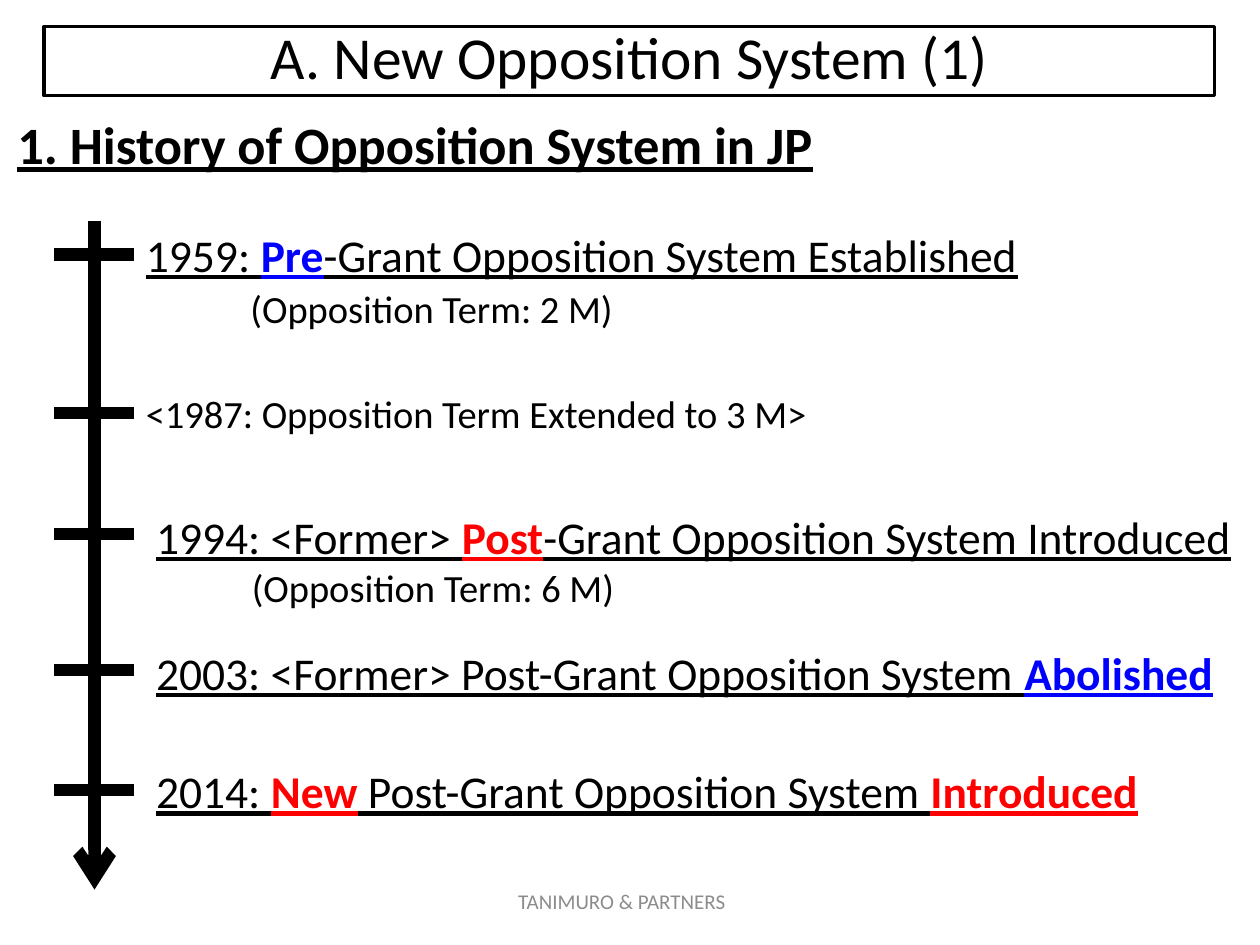
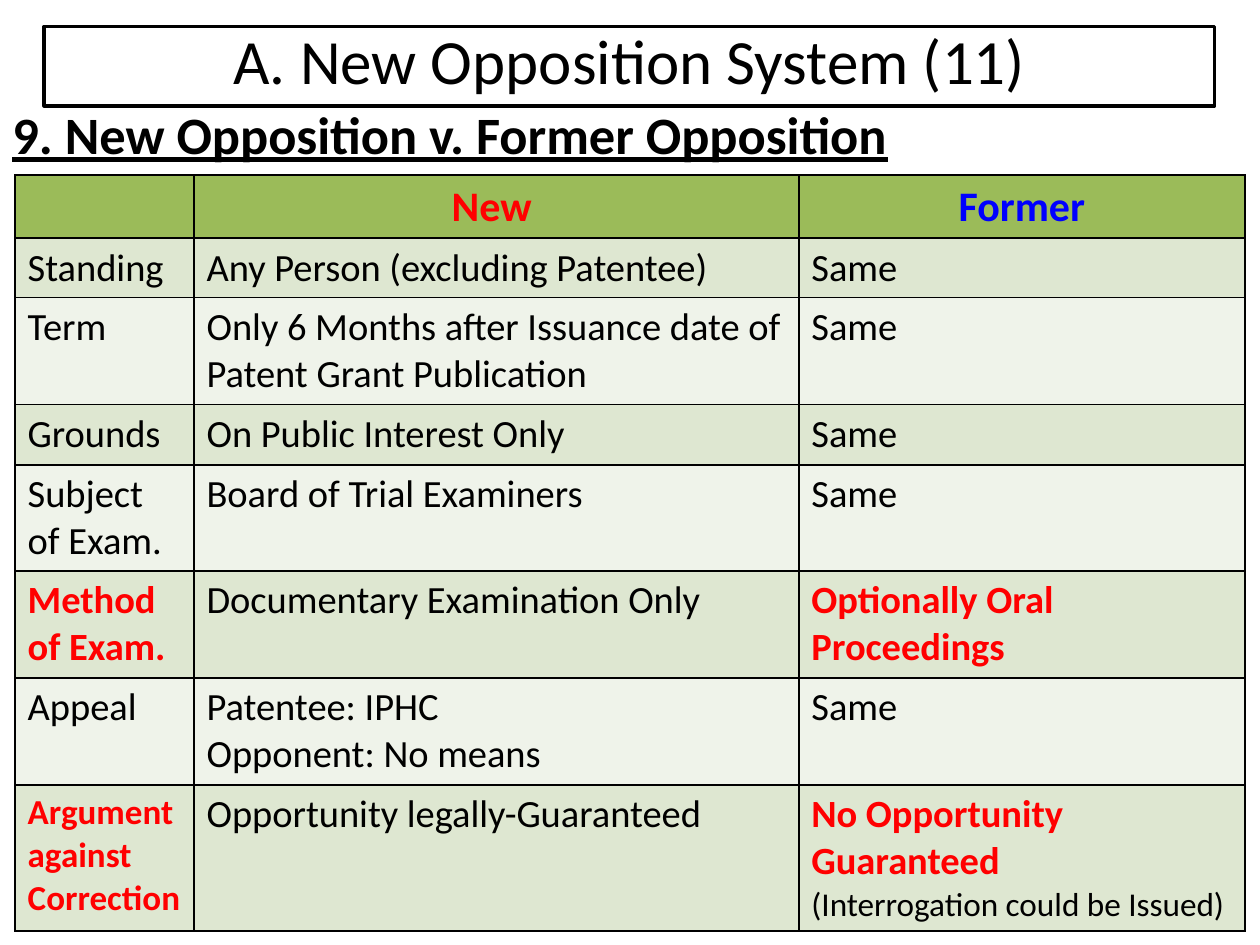
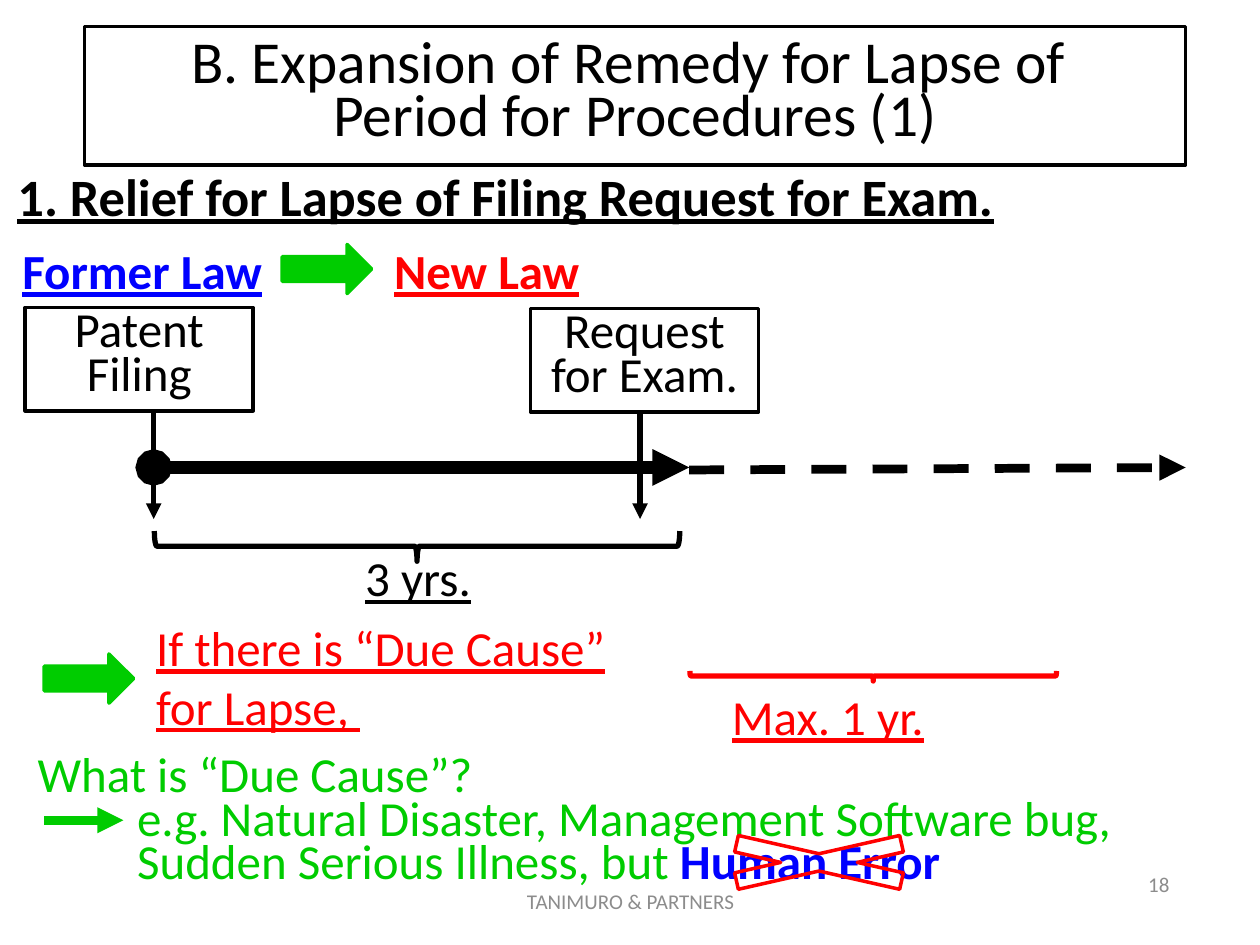
from dataclasses import dataclass
from typing import Any, NamedTuple, Optional

from pptx import Presentation
from pptx.dml.color import RGBColor
from pptx.enum.dml import MSO_LINE_DASH_STYLE as Dash
from pptx.enum.shapes import MSO_CONNECTOR as Connector, MSO_SHAPE as Preset
from pptx.enum.text import MSO_ANCHOR as Anchor, MSO_AUTO_SIZE as AutoSize, PP_ALIGN as Align
from pptx.oxml.ns import qn
from pptx.util import Inches, Pt
from lxml.etree import SubElement

FONT = "Calibri"
BLACK, WHITE, GREY = "000000", "FFFFFF", "8C8C8C"
RED, BLUE, GREEN = "FF0000", "0000FF", "00CC00"
HEADER_GREEN, BAND_DARK, BAND_LIGHT = "9BBB59", "DEE7D1", "EFF3EA"
FIRM = "TANIMURO & PARTNERS"


class Box(NamedTuple):
    left: float
    top: float
    width: float
    height: float

    def lengths(self) -> list[int]:
        return [Inches(value) for value in self]


@dataclass(frozen=True)
class Span:
    text: str
    color: str = BLACK
    bold: bool = False
    underline: bool = False


@dataclass(frozen=True)
class Para:
    spans: tuple[Span, ...]
    size: float = 22
    align: Any = Align.LEFT
    leading: Optional[float] = None
    before: float = 0
    indent: float = 0


@dataclass(frozen=True)
class Line:
    start: tuple[float, float]
    end: tuple[float, float]
    width: float
    color: str = BLACK
    head: Optional[str] = None
    tail: Optional[str] = None
    dash: Any = None


@dataclass(frozen=True)
class Figure:
    preset: Any
    box: Box
    line: str
    line_width: float = 2
    fill: Optional[str] = None
    rotation: float = 0


@dataclass(frozen=True)
class Event:
    """A stop on the timeline: the height of its tick, and its text."""
    tick: float
    box: Box
    paras: tuple[Para, ...]


def set_all(target: Any, values: dict[str, Any]) -> None:
    for name, value in values.items():
        setattr(target, name, value)


def paint(format_with_color: Any, color: str) -> None:
    """Give a fill, line fill or font one solid colour."""
    if hasattr(format_with_color, "solid"):
        format_with_color.solid()
        format_with_color.fore_color.rgb = RGBColor.from_string(color)
    else:
        format_with_color.color.rgb = RGBColor.from_string(color)


def single(text: str, size: float = 22, color: str = BLACK, bold: bool = False,
           underline: bool = False, **layout: Any) -> Para:
    """A paragraph of one span."""
    return Para((Span(text, color, bold, underline),), size, **layout)


def underlined(*pieces: tuple[str, str]) -> Para:
    """A timeline headline; coloured pieces are bold."""
    return Para(tuple(Span(text, color, color != BLACK, True) for text, color in pieces), 26)


def write(frame: Any, paras: tuple[Para, ...]) -> None:
    for number, item in enumerate(paras):
        para = frame.add_paragraph() if number else frame.paragraphs[0]
        set_all(para, {"alignment": item.align, "space_before": Pt(item.before)})
        if item.leading:
            para.line_spacing = Pt(item.leading)
        if item.indent:
            properties = para._p.get_or_add_pPr()
            properties.set("marL", str(Inches(item.indent)))
            properties.set("indent", "0")
        for piece in item.spans:
            for row, text in enumerate(piece.text.split("\n")):
                if row:
                    para.add_line_break()
                span = para.add_run()
                span.text = text
                set_all(span.font, {"name": FONT, "size": Pt(item.size), "bold": piece.bold,
                                    "underline": piece.underline})
                paint(span.font, piece.color)


def add_text(page: Any, box: Box, *paras: Para, anchor: Any = Anchor.TOP) -> None:
    frame = page.shapes.add_textbox(*box.lengths()).text_frame
    set_all(frame, {"word_wrap": True, "vertical_anchor": anchor})
    write(frame, paras)


def add_small_print(page: Any, box: Box, text: str, align: Any) -> None:
    add_text(page, box, single(text, 12, GREY, align=align), anchor=Anchor.MIDDLE)


def add_heading(page: Any, box: Box, text: str) -> None:
    add_text(page, box, single(text, 30, bold=True, underline=True))


def outline(shape: Any, color: str, width: float) -> None:
    paint(shape.line.fill, color)
    shape.line.width = Pt(width)


def add_figure(page: Any, figure: Figure) -> Any:
    shape = page.shapes.add_shape(figure.preset, *figure.box.lengths())
    shape.shadow.inherit = False
    shape.rotation = figure.rotation
    outline(shape, figure.line, figure.line_width)
    if figure.fill:
        paint(shape.fill, figure.fill)
    else:
        shape.fill.background()
    return shape


def add_line(page: Any, line: Line) -> None:
    ends = [Inches(value) for value in (*line.start, *line.end)]
    shape = page.shapes.add_connector(Connector.STRAIGHT, *ends)
    outline(shape, line.color, line.width)
    if line.dash:
        shape.line.dash_style = line.dash
    for tag, kind in (("a:headEnd", line.head), ("a:tailEnd", line.tail)):
        if kind:
            SubElement(shape.line._get_or_add_ln(), qn(tag), type=kind)
    SubElement(shape._element.spPr, qn("a:effectLst"))


def add_page(deck: Any, title: str, box: Box, size: float, leading: float) -> Any:
    """A title-only slide with its title in a white framed box."""
    page = deck.slides.add_slide(deck.slide_layouts[5])
    shape = page.shapes.title
    left, top, width, height = box.lengths()
    set_all(shape, {"left": left, "top": top, "width": width, "height": height})
    paint(shape.fill, WHITE)
    outline(shape, BLACK, 2)
    set_all(shape.text_frame, {"auto_size": AutoSize.NONE, "word_wrap": True,
                               "vertical_anchor": Anchor.MIDDLE})
    write(shape.text_frame, (single(title, size, align=Align.CENTER, leading=leading),))
    return page


def border_cell(cell: Any) -> None:
    properties = cell._tc.get_or_add_tcPr()
    for tag in ("a:lnL", "a:lnR", "a:lnT", "a:lnB"):
        edge = SubElement(properties, qn(tag), w=str(Pt(1)))
        fill = SubElement(edge, qn("a:solidFill"))
        SubElement(fill, qn("a:srgbClr"), val=BLACK)


def add_comparison(page: Any, box: Box, columns: list[float], heights: list[float],
                   rows: list[tuple[Any, ...]]) -> None:
    table = page.shapes.add_table(len(rows), len(columns), *box.lengths()).table
    for column, width in zip(table.columns, columns):
        column.width = Inches(width)
    for number, (height, values) in enumerate(zip(heights, rows)):
        table.rows[number].height = Inches(height)
        band = BAND_DARK if number % 2 else BAND_LIGHT
        for cell, value in zip(table.rows[number].cells, values):
            border_cell(cell)
            paint(cell.fill, band if number else HEADER_GREEN)
            if value:
                write(cell.text_frame, (single(value),) if isinstance(value, str) else value)


def build_history(deck: Any) -> None:
    page = add_page(deck, "A. New Opposition System (1)", Box(0.35, 0.21, 9.29, 0.55), 34, 35)
    add_heading(page, Box(0.04, 0.84, 8.9, 0.61), "1. History of Opposition System in JP")
    add_small_print(page, Box(3.35, 6.95, 3.17, 0.4), FIRM, Align.CENTER)
    add_line(page, Line((0.75, 1.75), (0.75, 7.06), 7, tail="arrow"))
    events = [
        Event(2.02, Box(1.06, 1.75, 8.66, 0.98), (
            underlined(("1959: ", BLACK), ("Pre", BLUE),
                       ("-Grant Opposition System Established", BLACK)),
            single("(Opposition Term: 2 M)", indent=0.83, before=2))),
        Event(3.28, Box(1.06, 3.05, 8.66, 0.47), (
            single("<1987: Opposition Term Extended to 3 M>"),)),
        Event(4.24, Box(1.14, 3.99, 9.29, 0.91), (
            underlined(("1994: <Former> ", BLACK), ("Post", RED),
                       ("-Grant Opposition System Introduced", BLACK)),
            single("(Opposition Term: 6 M)", indent=0.76))),
        Event(5.32, Box(1.14, 5.07, 8.66, 0.54), (
            underlined(("2003: <Former> Post-Grant Opposition System ", BLACK),
                       ("Abolished", BLUE)),)),
        Event(6.27, Box(1.14, 6.01, 8.66, 0.54), (
            underlined(("2014: ", BLACK), ("New", RED),
                       (" Post-Grant Opposition System ", BLACK), ("Introduced", RED)),)),
    ]
    for event in events:
        add_line(page, Line((0.43, event.tick), (1.06, event.tick), 7))
        add_text(page, event.box, *event.paras)


def build_comparison(deck: Any) -> None:
    page = add_page(deck, "A. New Opposition System (11)", Box(0.35, 0.21, 9.29, 0.63), 36, 35)
    add_heading(page, Box(0, 0.76, 9.88, 0.71), "9. New Opposition v. Former Opposition")

    def header(text: str, color: str) -> tuple[Para, ...]:
        return (single(text, 24, color, True, align=Align.CENTER),)

    def changed(text: str, size: float = 22) -> tuple[Para, ...]:
        return (single(text, size, RED, True),)

    rows = [
        ("", header("New ", RED), header("Former", BLUE)),
        ("Standing", "Any Person (excluding Patentee)", "Same"),
        ("Term", "Only 6 Months after Issuance date of Patent Grant Publication", "Same"),
        ("Grounds", "On Public Interest Only", "Same"),
        ("Subject of Exam.", "Board of Trial Examiners", "Same"),
        (changed("Method of Exam."), "Documentary Examination Only",
         changed("Optionally Oral Proceedings")),
        ("Appeal", (single("Patentee: IPHC"), single("Opponent: No means")), "Same"),
        (changed("Argument against Correction", 20), "Opportunity legally-Guaranteed",
         changed("No Opportunity Guaranteed")
         + (single("(Interrogation could be Issued)", 19),)),
    ]
    add_comparison(page, Box(0.12, 1.39, 9.76, 6), [1.42, 4.8, 3.54],
                   [0.5, 0.47, 0.85, 0.48, 0.84, 0.85, 0.85, 1.16], rows)


def build_remedy(deck: Any) -> None:
    page = add_page(deck, "B. Expansion of Remedy for Lapse of \nPeriod for Procedures (1)",
                    Box(0.67, 0.21, 8.74, 1.1), 34, 30)
    add_heading(page, Box(0.04, 1.25, 9.69, 0.61),
                "1. Relief for Lapse of Filing Request for Exam.")
    add_small_print(page, Box(3.42, 6.95, 3.17, 0.4), FIRM, Align.CENTER)
    add_small_print(page, Box(7.05, 6.82, 2.33, 0.4), "18", Align.RIGHT)

    labels = [
        (Box(0.08, 1.86, 2.17, 0.57), "Former Law", BLUE, True),
        (Box(3.03, 1.86, 1.73, 0.57), "New Law", RED, True),
        (Box(2.8, 4.3, 2.05, 0.57), "3 yrs.", BLACK, False),
        (Box(5.71, 5.4, 2.05, 0.57), "Max. 1 yr.", RED, False),
        (Box(1.14, 4.85, 3.86, 1.04), "If there is “Due Cause” for Lapse, ", RED, False),
    ]
    for box, text, color, bold in labels:
        add_text(page, box, single(text, 28, color, bold, True))

    lines = [
        Line((1.22, 3.71), (5.47, 3.71), 7, head="oval", tail="triangle"),
        Line((5.47, 3.73), (9.41, 3.71), 5, tail="triangle", dash=Dash.DASH),
        Line((0.35, 6.51), (0.98, 6.51), 5, GREEN, tail="triangle"),
    ]
    lines += [Line((x, 3.26), (x, 4.12), 3, tail="triangle") for x in (1.22, 5.08)]
    for line in lines:
        add_line(page, line)

    steps = [("Patent Filing", 0.2, 2.44), ("Request for Exam.", 4.21, 2.45)]
    for text, left, top in steps:
        frame = add_figure(page, Figure(Preset.RECTANGLE, Box(left, top, 1.81, 0.82),
                                        BLACK, fill=WHITE)).text_frame
        set_all(frame, {"word_wrap": True, "vertical_anchor": Anchor.TOP})
        write(frame, (single(text, 28, align=Align.CENTER, leading=25),))

    add_text(page, Box(0.2, 5.97, 9.8, 1.17),
             single("What is “Due Cause”?", 28, GREEN, leading=25),
             single("e.g. Natural Disaster, Management Software bug,", 28, GREEN,
                    leading=25, indent=0.79),
             Para((Span("Sudden Serious Illness, but ", GREEN), Span("Human Error", BLUE, True)),
                  28, leading=25, indent=0.79))

    figures = [Figure(Preset.RIGHT_ARROW, Box(left, top, 0.71, 0.39), GREEN, fill=GREEN)
               for left, top in ((2.24, 1.94), (0.35, 5.19))]
    figures += [
        Figure(Preset.RIGHT_BRACE, Box(3.19, 2.25, 0.24, 4.17), BLACK, 3, rotation=90),
        Figure(Preset.RIGHT_BRACE, Box(6.89, 3.91, 0.08, 2.91), RED, 3, rotation=90),
        Figure(Preset.MATH_MULTIPLY, Box(5.24, 6.56, 2.52, 0.57), RED),
    ]
    for figure in figures:
        add_figure(page, figure)


def main() -> None:
    deck = Presentation()
    set_all(deck, {"slide_width": Inches(10), "slide_height": Inches(7.5)})
    build_history(deck)
    build_comparison(deck)
    build_remedy(deck)
    deck.save("out.pptx")


if __name__ == "__main__":
    main()
